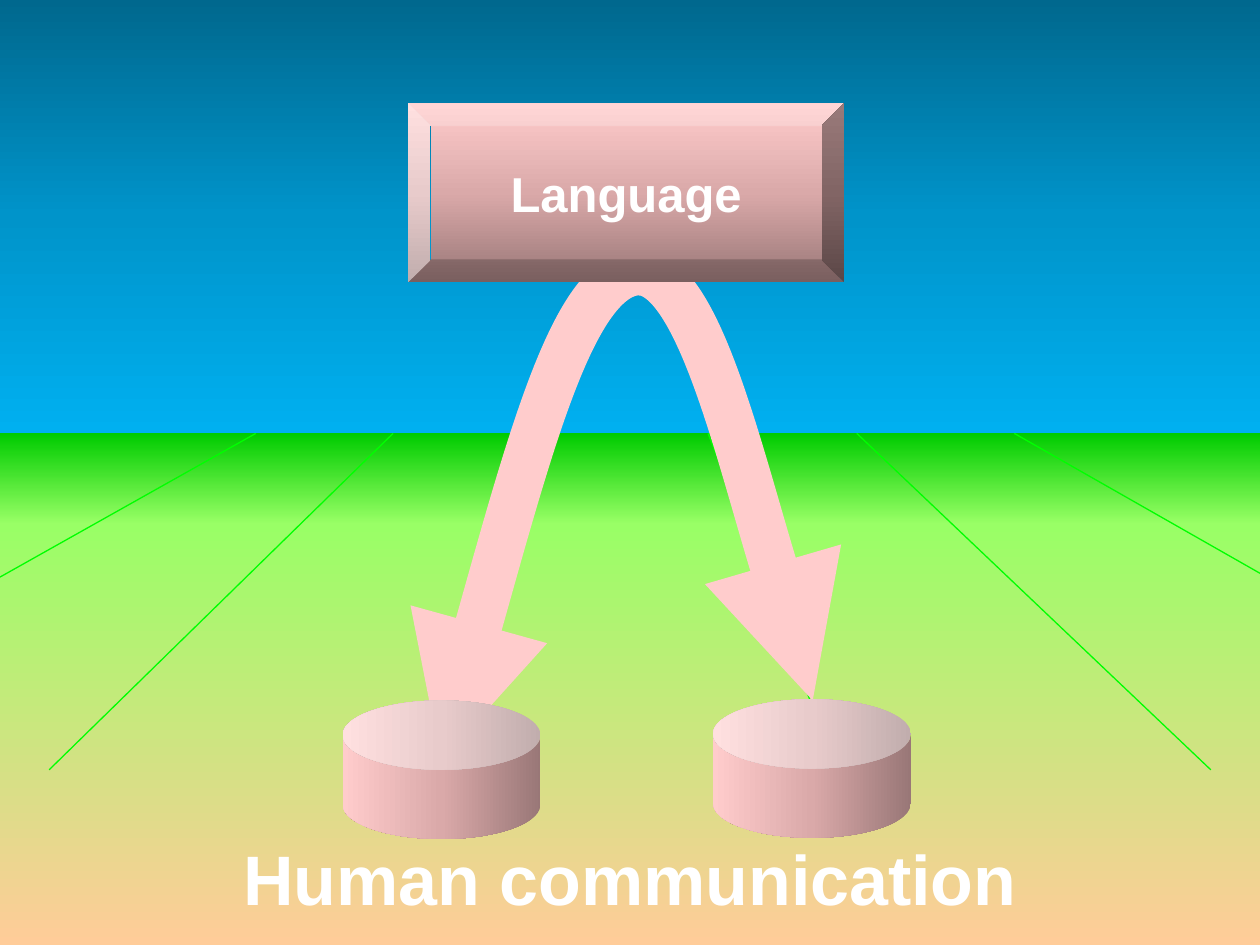
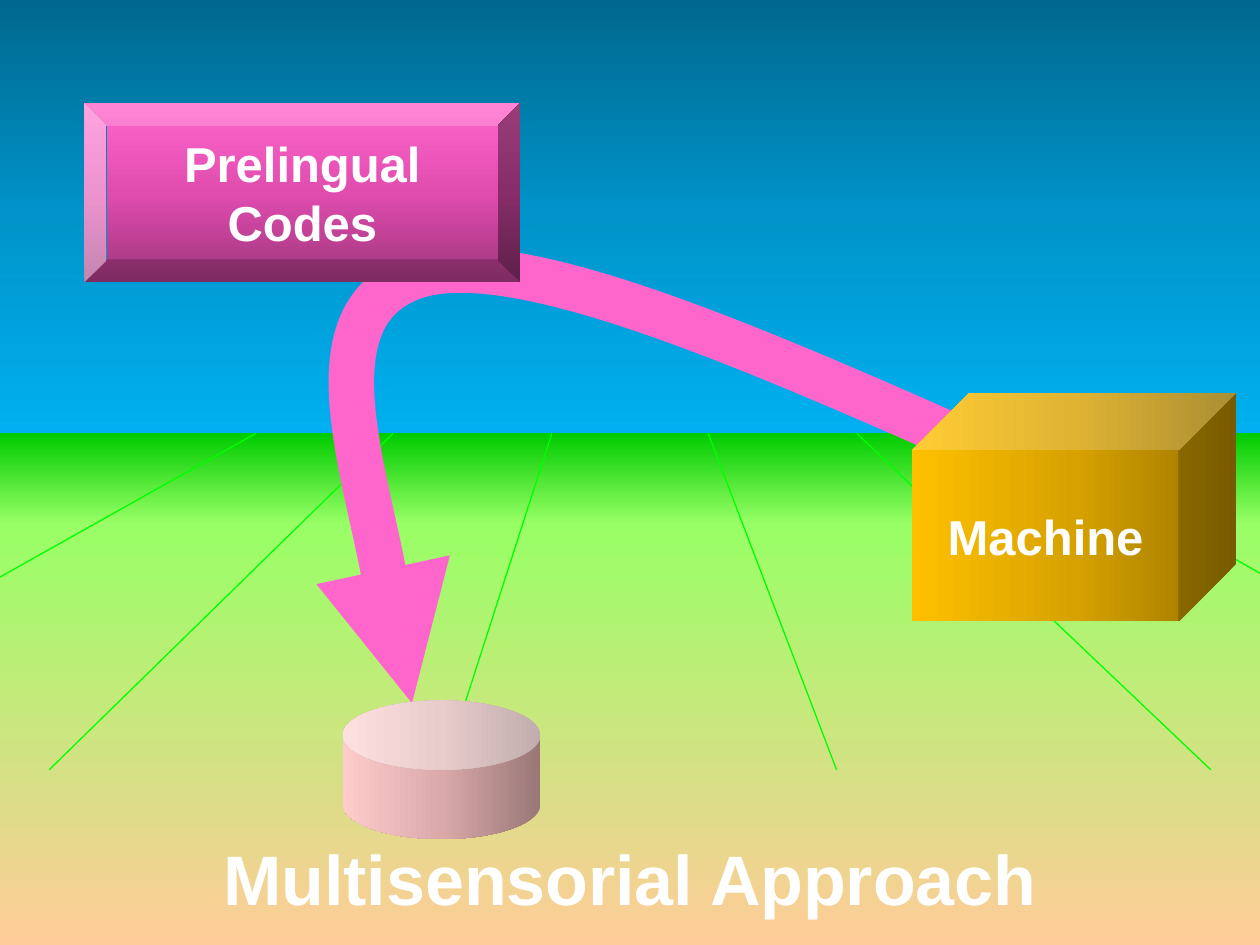
from dataclasses import dataclass

from lxml.etree import SubElement
from pptx import Presentation
from pptx.dml.color import RGBColor
from pptx.enum.shapes import MSO_CONNECTOR as Connector, MSO_SHAPE as Preset
from pptx.enum.text import MSO_ANCHOR as Anchor, MSO_AUTO_SIZE as AutoSize, PP_ALIGN as Align
from pptx.oxml.ns import qn
from pptx.util import Inches, Pt

COLOURS = {
    "text": "FFFFFF", "ray": "00FF00",
    "language": "FFCCCC", "codes": "FF66CC",
}
# Gradient stops, position in percent and colour
GRADIENTS = {
    "sky": [(0, "00688E"), (50, "0094CA"), (100, "00B0F0")],
    "horizon": [(0, "00CC00"), (100, "99FF66")],
    "meadow": [(0, "99FF66"), (100, "FFCC99")],
    "language": [(0, "997777"), (50, "DAA9A9"), (100, "FFCCCC")],
    "codes": [(0, "9E367B"), (50, "E14CAF"), (100, "FF66CC")],
    "machine": [(0, "977200"), (50, "D7A200"), (100, "FFC000")],
}
UP, LEFT, DOWN = 90, 180, 270  # gradient directions, counter-clockwise
FONT = "Arial"
WIDTH, HEIGHT = Inches(10), Inches(7.5)
COLUMNS, ROWS = 100, 75  # grid on every slide


@dataclass
class Box:
    """An area measured in grid columns and rows."""
    left: float
    top: float
    width: float
    height: float

    def area(self, x, y, width, height):
        return Box(self.left + x * self.width, self.top + y * self.height,
                   width * self.width, height * self.height)

    def point(self, x, y):
        return (round((self.left + x * self.width) * WIDTH / COLUMNS),
                round((self.top + y * self.height) * HEIGHT / ROWS))

    def emu(self):
        right, bottom = self.point(1, 1)
        left, top = self.point(0, 0)
        return left, top, right - left, bottom - top


SLIDE = Box(0, 0, COLUMNS, ROWS)
HORIZON, STRIP = 34.4 / ROWS, 7.2 / ROWS
SPEAKER = Box(27.2, 55.6, 15.7, 11)
LISTENER = Box(56.6, 55.5, 15.7, 11)


def rgb(name):
    return RGBColor.from_string(COLOURS[name])


def write(frame, text, size):
    frame.word_wrap = True
    frame.vertical_anchor = Anchor.MIDDLE
    paragraph = frame.paragraphs[0]
    paragraph.alignment = Align.CENTER
    run = paragraph.add_run()
    run.text = text
    run.font.name, run.font.size, run.font.bold = FONT, Pt(size), True
    run.font.color.rgb = rgb("text")


def solid(slide, preset, box, gradient, direction, label=None):
    """Preset shape with a gradient, no outline and an optional label."""
    body = slide.shapes.add_shape(preset, *box.emu())
    body.shadow.inherit = False
    body.line.fill.background()
    body.fill.gradient()
    body.fill.gradient_angle = direction
    stops = next(body.element.iter(qn("a:gsLst")))
    for stop in list(stops):
        stops.remove(stop)
    for position, colour in GRADIENTS[gradient]:
        stop = SubElement(stops, qn("a:gs"), pos=str(position * 1000))
        SubElement(stop, qn("a:srgbClr"), val=colour)
    if label:
        write(body.text_frame, label, 28)
    return body


def draw_scenery(slide, box):
    """Sky above, field with diverging rays below."""
    meadow_top = HORIZON + STRIP
    scenery = [
        solid(slide, Preset.RECTANGLE,
              box.area(0, meadow_top, 1, 1 - meadow_top), "meadow", DOWN),
        solid(slide, Preset.RECTANGLE, box.area(0, HORIZON, 1, STRIP), "horizon", DOWN),
    ]
    # Column on the horizon, then column and row of the near end
    rays = [(56.2, 66.4, 61.1), (80.5, 100, 45.5), (68, 96.1, 61.1),
            (43.8, 35.2, 61.1), (31.2, 3.9, 61.1), (20.3, 0, 45.8)]
    for start, end, row in rays:
        ray = slide.shapes.add_connector(
            Connector.STRAIGHT, *box.point(start / COLUMNS, HORIZON),
            *box.point(end / COLUMNS, row / ROWS))
        ray.line.color.rgb = rgb("ray")
        ray.line.width = Pt(0.75)
        SubElement(ray.element.spPr, qn("a:effectLst"))
        scenery.append(ray)
    scenery.append(solid(slide, Preset.RECTANGLE, box.area(0, 0, 1, HORIZON), "sky", DOWN))
    return scenery


def share_scenery(slide):
    """Draw the scenery once and hand it to the layout of all slides."""
    tree = slide.slide_layout.shapes.element
    for index, item in enumerate(draw_scenery(slide, SLIDE)):
        tree.insert(2 + index, item.element)


def draw_title(slide, text, box):
    title = slide.shapes.title
    title.left, title.top, title.width, title.height = box.emu()
    title.text_frame.auto_size = AutoSize.NONE
    write(title.text_frame, text, 40)


def draw_flow(slide, points, colour, width, heads):
    """Curved arrow through a start and groups of three Bezier points."""
    start, *rest = [SLIDE.point(x / COLUMNS, y / ROWS) for x, y in points]
    builder = slide.shapes.build_freeform(*start)
    builder.add_line_segments(rest, close=False)
    flow = builder.convert_to_shape()
    flow.shadow.inherit = False
    flow.fill.background()
    flow.line.color.rgb = rgb(colour)
    flow.line.width = Pt(width)
    # Turn each three segments into one cubic curve
    segments = list(flow.element.iter(qn("a:lnTo")))
    outline_points = segments[0].getparent()
    for first in range(0, len(segments), 3):
        curve = SubElement(outline_points, qn("a:cubicBezTo"))
        for segment in segments[first:first + 3]:
            curve.append(segment[0])
            outline_points.remove(segment)
    outline = flow.element.spPr.find(qn("a:ln"))
    for head in heads:
        SubElement(outline, qn(f"a:{head}"), type="triangle")


def draw_person(slide, box):
    solid(slide, Preset.CAN, box, "language", LEFT).adjustments[0] = 0.5


def draw_code(slide, left, label, gradient):
    solid(slide, Preset.BEVEL, Box(left, 8.2, 34.6, 14.2), gradient, UP, label)


def add_scene(deck, title):
    slide = deck.slides.add_slide(deck.slide_layouts.get_by_name("Title Only"))
    draw_title(slide, title, Box(0, 65.8, COLUMNS, 7.7))
    return slide


def build_human_scene(deck):
    slide = add_scene(deck, "Human communication")
    share_scenery(slide)
    draw_flow(slide, [(35, 60.4), (40.2, 41.4), (45.4, 22.4), (50.3, 21.6),
                      (55.2, 20.8), (64.5, 55.6), (64.5, 55.6)],
              "language", 27, ["headEnd", "tailEnd"])
    for person in (SPEAKER, LISTENER):
        draw_person(slide, person)
    draw_code(slide, 32.4, "Language", "language")


def build_machine_scene(deck):
    slide = add_scene(deck, "Multisensorial Approach")
    draw_flow(slide, [(80.1, 36.6), (60.3, 27.8), (40.4, 18.9), (32.5, 22.1),
                      (24.6, 25.3), (32.7, 55.8), (32.7, 55.8)],
              "codes", 26, ["tailEnd"])
    draw_person(slide, SPEAKER)
    draw_code(slide, 6.7, "Prelingual Codes", "codes")
    solid(slide, Preset.CUBE, Box(72.4, 31.2, 25.7, 18.1), "machine", LEFT, "Machine")


def main():
    deck = Presentation()
    deck.slide_width, deck.slide_height = WIDTH, HEIGHT
    build_human_scene(deck)
    build_machine_scene(deck)
    deck.save("out.pptx")


if __name__ == "__main__":
    main()
